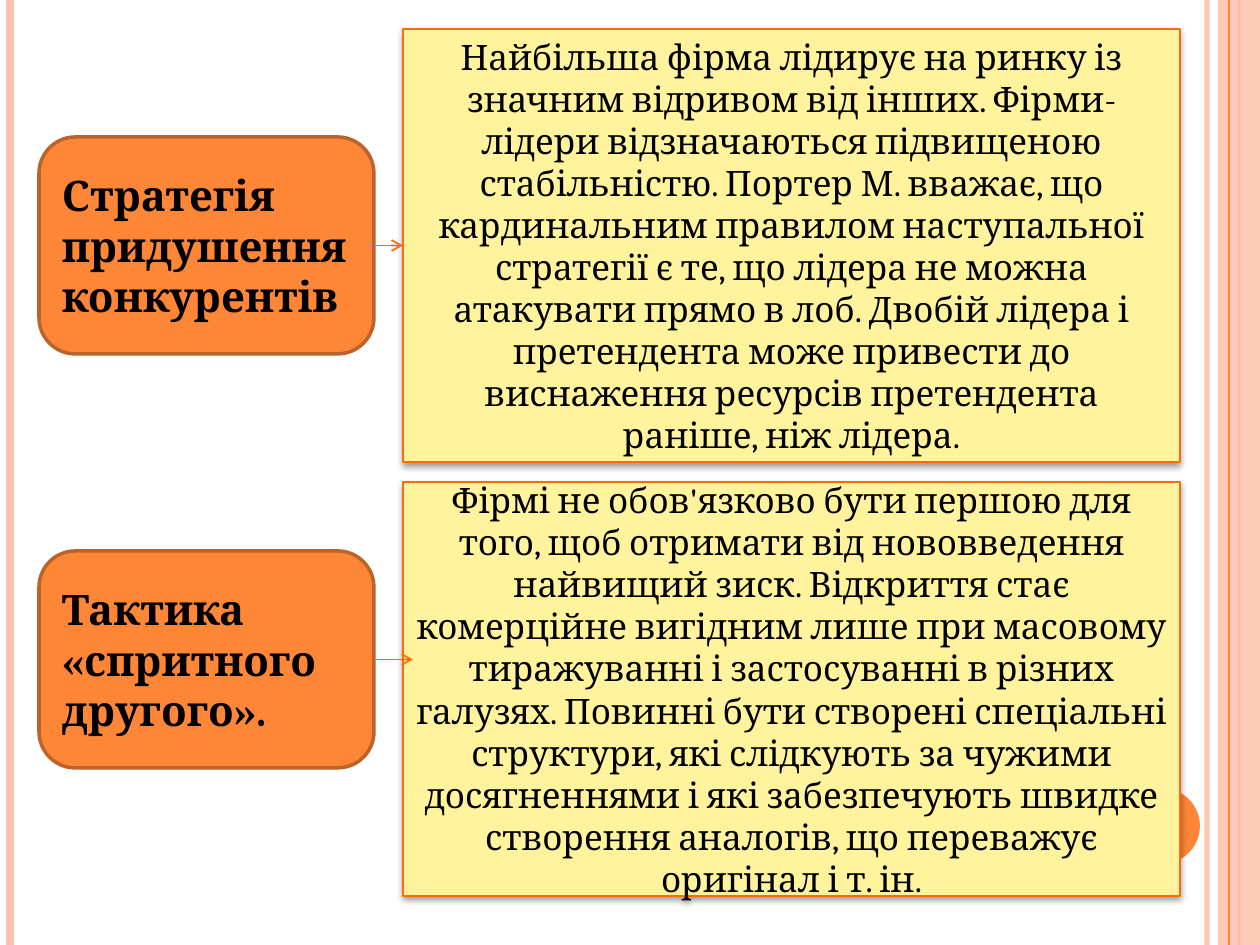
from lxml.etree import SubElement
from pptx import Presentation
from pptx.dml.color import RGBColor
from pptx.enum.shapes import MSO_CONNECTOR, MSO_SHAPE
from pptx.enum.text import MSO_ANCHOR, PP_ALIGN
from pptx.oxml.ns import qn
from pptx.util import Pt

ORANGE, PINK, YELLOW = "FE8637", "FEC3AE", "FFF39D"
EDGE, BROWN = "FF6B0A", "BC6329"

STRIPES_BACK = [(1207, PINK, 3, 93), (10, PINK, 4.5, 100), (1239, ORANGE, 1.5, 100)]
STRIPES_FRONT = [(1229, ORANGE, 0.75, 100)]
BAND = (1218, 0, 42, 945)
DOT = (1124, 788, 76, 76)

LABEL_X, LABEL_W, LABEL_H = 39, 335, 217
BODY_X, BODY_W = 403, 777
ROWS = [
    dict(label="Стратегія придушення конкурентів", label_y=137, body_y=29, body_h=433,
         arrow_x=403, joined=True,
         body="Найбільша фірма лідирує на ринку із значним відривом від інших. "
              "Фірми-лідери відзначаються підвищеною стабільністю. Портер М. вважає, "
              "що кардинальним правилом наступальної стратегії є те, що лідера не можна "
              "атакувати прямо в лоб. Двобій лідера і претендента може привести до "
              "виснаження ресурсів претендента раніше, ніж лідера."),
    dict(label="Тактика «спритного другого».", label_y=551, body_y=482, body_h=414,
         arrow_x=413, joined=False,
         body="Фірмі не обов'язково бути першою для того, щоб отримати від нововведення "
              "найвищий зиск. Відкриття стає комерційне вигідним лише при масовому "
              "тиражуванні і застосуванні в різних галузях. Повинні бути створені "
              "спеціальні структури, які слідкують за чужими досягненнями і які "
              "забезпечують швидке створення аналогів, що переважує оригінал і т. ін."),
]


def px(n):
    return round(n * 914400 / 126)


def color(h):
    return RGBColor.from_string(h)


def set_alpha(sp, alpha):
    if alpha < 100:
        clr = next(sp._element.spPr.iter(qn("a:srgbClr")))
        SubElement(clr, qn("a:alpha"), val=str(alpha * 1000))


def add_box(s, kind, box, fill, line=None, width=1, alpha=100):
    sp = s.shapes.add_shape(kind, *map(px, box))
    sp.shadow.inherit = False
    sp.fill.solid()
    sp.fill.fore_color.rgb = color(fill)
    set_alpha(sp, alpha)
    if line:
        sp.line.color.rgb = color(line)
        sp.line.width = Pt(width)
    else:
        sp.line.fill.background()
    return sp


def add_line(s, ends, line, width, alpha=100, arrow=False):
    c = s.shapes.add_connector(MSO_CONNECTOR.STRAIGHT, *map(px, ends))
    c.line.color.rgb = color(line)
    c.line.width = Pt(width)
    set_alpha(c, alpha)
    if arrow:
        SubElement(c.line._get_or_add_ln(), qn("a:tailEnd"), type="arrow")
    SubElement(c._element.spPr, qn("a:effectLst"))
    return c


def add_stripes(s, stripes):
    for x, line, width, alpha in stripes:
        add_line(s, (x, 0, x, 945), line, width, alpha)


def add_text(sp, text, size, bold=False, align=PP_ALIGN.LEFT):
    tf = sp.text_frame
    tf.word_wrap = True
    tf.vertical_anchor = MSO_ANCHOR.MIDDLE
    p = tf.paragraphs[0]
    p.alignment = align
    r = p.add_run()
    r.text = text
    r.font.name = "Cambria"
    r.font.size = Pt(size)
    r.font.bold = bold
    r.font.color.rgb = color("000000")


def add_shadow(sp):
    effects = sp._element.spPr.find(qn("a:effectLst"))
    shadow = SubElement(effects, qn("a:outerShdw"), blurRad=str(Pt(4)), dist=str(Pt(2)),
                        dir="5400000", rotWithShape="0")
    clr = SubElement(shadow, qn("a:srgbClr"), val="000000")
    SubElement(clr, qn("a:alpha"), val="40000")


def main():
    prs = Presentation()
    prs.slide_width, prs.slide_height = px(1260), px(945)
    s = prs.slides.add_slide(prs.slide_layouts[6])

    add_stripes(s, STRIPES_BACK)
    add_box(s, MSO_SHAPE.RECTANGLE, BAND, PINK, alpha=87)
    add_stripes(s, STRIPES_FRONT)
    add_box(s, MSO_SHAPE.OVAL, DOT, ORANGE)

    pairs = []
    for row in ROWS:
        label = add_box(s, MSO_SHAPE.ROUNDED_RECTANGLE,
                        (LABEL_X, row["label_y"], LABEL_W, LABEL_H), ORANGE, BROWN, 2)
        add_text(label, row["label"], 24, bold=True)
        body = add_box(s, MSO_SHAPE.RECTANGLE,
                       (BODY_X, row["body_y"], BODY_W, row["body_h"]), YELLOW, EDGE)
        add_shadow(body)
        add_text(body, row["body"], 20, align=PP_ALIGN.CENTER)
        pairs.append((row, label, body))

    for row, label, body in pairs:
        y = row["label_y"] + LABEL_H / 2
        c = add_line(s, (LABEL_X + LABEL_W, y, row["arrow_x"], y), EDGE, 1, arrow=True)
        c.begin_connect(label, 3)
        if row["joined"]:
            c.end_connect(body, 1)

    prs.save("out.pptx")


if __name__ == "__main__":
    main()
